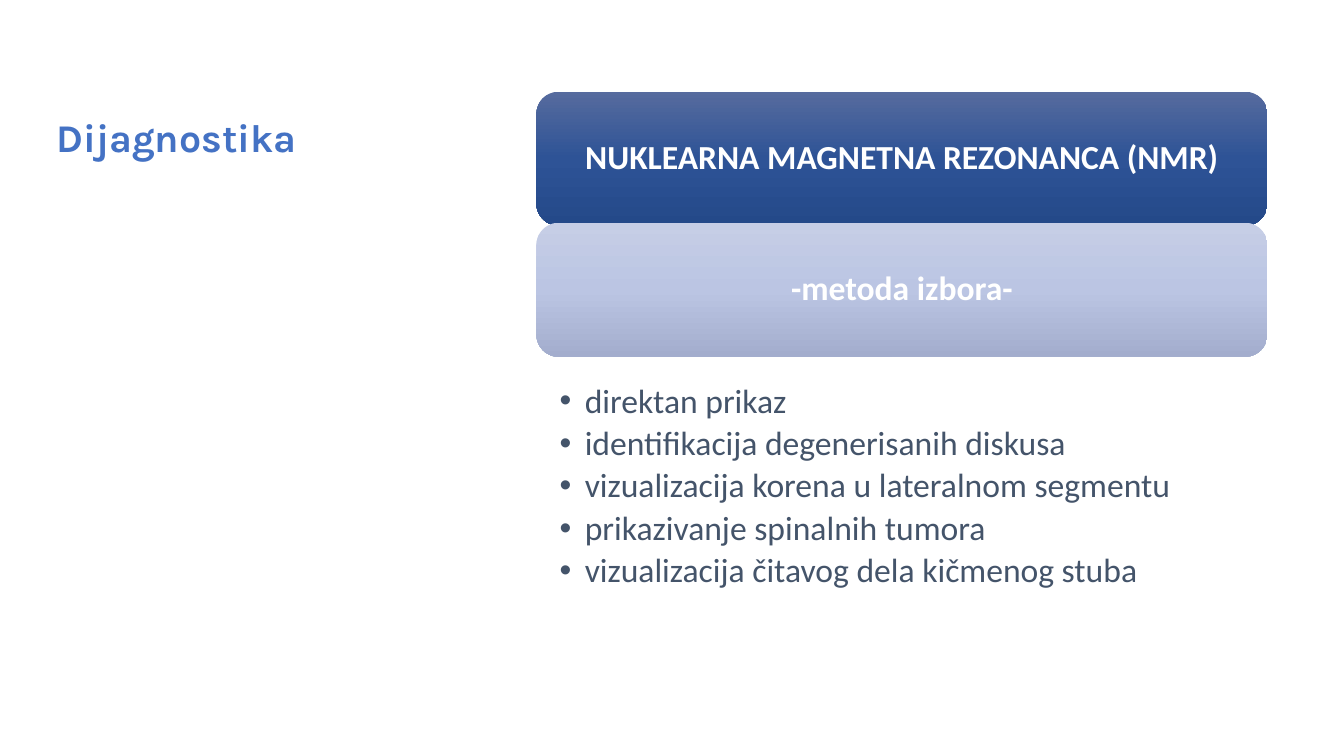
from copy import deepcopy
from dataclasses import dataclass

from lxml import etree
from pptx import Presentation
from pptx.dml.color import RGBColor
from pptx.enum.shapes import MSO_SHAPE
from pptx.enum.text import MSO_ANCHOR, MSO_AUTO_SIZE, PP_ALIGN
from pptx.oxml.ns import qn
from pptx.slide import Slide
from pptx.util import Inches, Pt

ROUNDED = MSO_SHAPE.ROUNDED_RECTANGLE
MIDDLE, TOP = MSO_ANCHOR.MIDDLE, MSO_ANCHOR.TOP
CENTER, LEFT = PP_ALIGN.CENTER, PP_ALIGN.LEFT
NO_AUTOFIT = MSO_AUTO_SIZE.NONE

WHITE = RGBColor(0xFF, 0xFF, 0xFF)
HEADING_BLUE = RGBColor(0x44, 0x72, 0xC4)
SLATE = RGBColor(0x44, 0x54, 0x6A)
DARK_BLUES = (RGBColor(0x56, 0x6B, 0x9E), RGBColor(0x2E, 0x53, 0x96),
              RGBColor(0x24, 0x49, 0x89))
PALE_BLUES = (RGBColor(0xC6, 0xCE, 0xE6), RGBColor(0xBB, 0xC5, 0xE3),
              RGBColor(0xA3, 0xAD, 0xCD))

COLUMN_LEFT, COLUMN_WIDTH = 5.32, 7.25
BANNER_TOP, BANNER_HEIGHT, BANNER_STEP = 0.91, 1.33, 1.3


@dataclass
class Banner:
    text: str
    gradient: tuple[RGBColor, RGBColor, RGBColor]


BANNERS = [
    Banner("NUKLEARNA MAGNETNA REZONANCA (NMR)", DARK_BLUES),
    Banner("-metoda izbora-", PALE_BLUES),
]
FINDINGS = [
    "direktan prikaz",
    "identifikacija degenerisanih diskusa",
    "vizualizacija korena u lateralnom segmentu",
    "prikazivanje spinalnih tumora",
    "vizualizacija čitavog dela kičmenog stuba",
]


def place(shape, left: float, top: float, width: float, height: float) -> None:
    shape.left, shape.top = Inches(left), Inches(top)
    shape.width, shape.height = Inches(width), Inches(height)


def set_up_frame(frame, anchor, side: float, edge: float) -> None:
    frame.word_wrap = True
    frame.auto_size = NO_AUTOFIT
    frame.vertical_anchor = anchor
    frame.margin_left = frame.margin_right = Inches(side)
    frame.margin_top = frame.margin_bottom = Inches(edge)


def format_paragraph(paragraph, align, font_name: str, size: float,
                     color: RGBColor, bold: bool) -> None:
    paragraph.alignment = align
    paragraph.line_spacing = 0.9
    paragraph.space_before = Pt(0)
    for run in paragraph.runs:
        run.font.name = font_name
        run.font.size = Pt(size)
        run.font.bold = bold
        run.font.color.rgb = color


def add_banner(slide: Slide, banner: Banner, top: float) -> None:
    card = slide.shapes.add_shape(
        ROUNDED, Inches(COLUMN_LEFT), Inches(top),
        Inches(COLUMN_WIDTH), Inches(BANNER_HEIGHT))
    card.shadow.inherit = False
    card.line.fill.background()

    # Three-colour gradient from top to bottom
    card.fill.gradient()
    card.fill.gradient_angle = 270
    stop_list = next(card._element.spPr.iter(qn("a:gsLst")))
    stop_list.insert(1, deepcopy(stop_list[0]))
    for stop, color, position in zip(card.fill.gradient_stops,
                                     banner.gradient, (0, 0.5, 1)):
        stop.color.rgb = color
        stop.position = position

    set_up_frame(card.text_frame, MIDDLE, 0.1, 0.1)
    card.text_frame.text = banner.text
    format_paragraph(card.text_frame.paragraphs[0], CENTER, "Calibri", 24,
                     WHITE, True)


def add_bullet(paragraph) -> None:
    properties = paragraph._p.get_or_add_pPr()
    properties.set("marL", str(Inches(0.25)))
    properties.set("indent", str(-Inches(0.25)))
    etree.SubElement(properties, qn("a:buChar"), char="•")


def main() -> None:
    presentation = Presentation()
    presentation.slide_width = Inches(13.33)
    presentation.slide_height = Inches(7.5)
    slide = presentation.slides.add_slide(presentation.slide_layouts[1])

    # Title
    title = slide.shapes.title
    place(title, 0.46, 0.59, 2.79, 1.59)
    set_up_frame(title.text_frame, MIDDLE, 0.1, 0.05)
    title.text_frame.text = "Dijagnostika"
    format_paragraph(title.text_frame.paragraphs[0], LEFT, "Karla", 28,
                     HEADING_BLUE, True)

    # Method banners
    for index, banner in enumerate(BANNERS):
        add_banner(slide, banner, BANNER_TOP + index * BANNER_STEP)

    # List of findings
    findings = slide.placeholders[1]
    place(findings, COLUMN_LEFT, 3.78, COLUMN_WIDTH, 2.24)
    set_up_frame(findings.text_frame, TOP, 0.23, 0.03)
    findings.text_frame.text = "\n".join(FINDINGS)
    for paragraph in findings.text_frame.paragraphs:
        add_bullet(paragraph)
        format_paragraph(paragraph, LEFT, "Calibri", 24, SLATE, False)
        paragraph.space_after = Pt(4.4)

    presentation.save("out.pptx")


if __name__ == "__main__":
    main()
